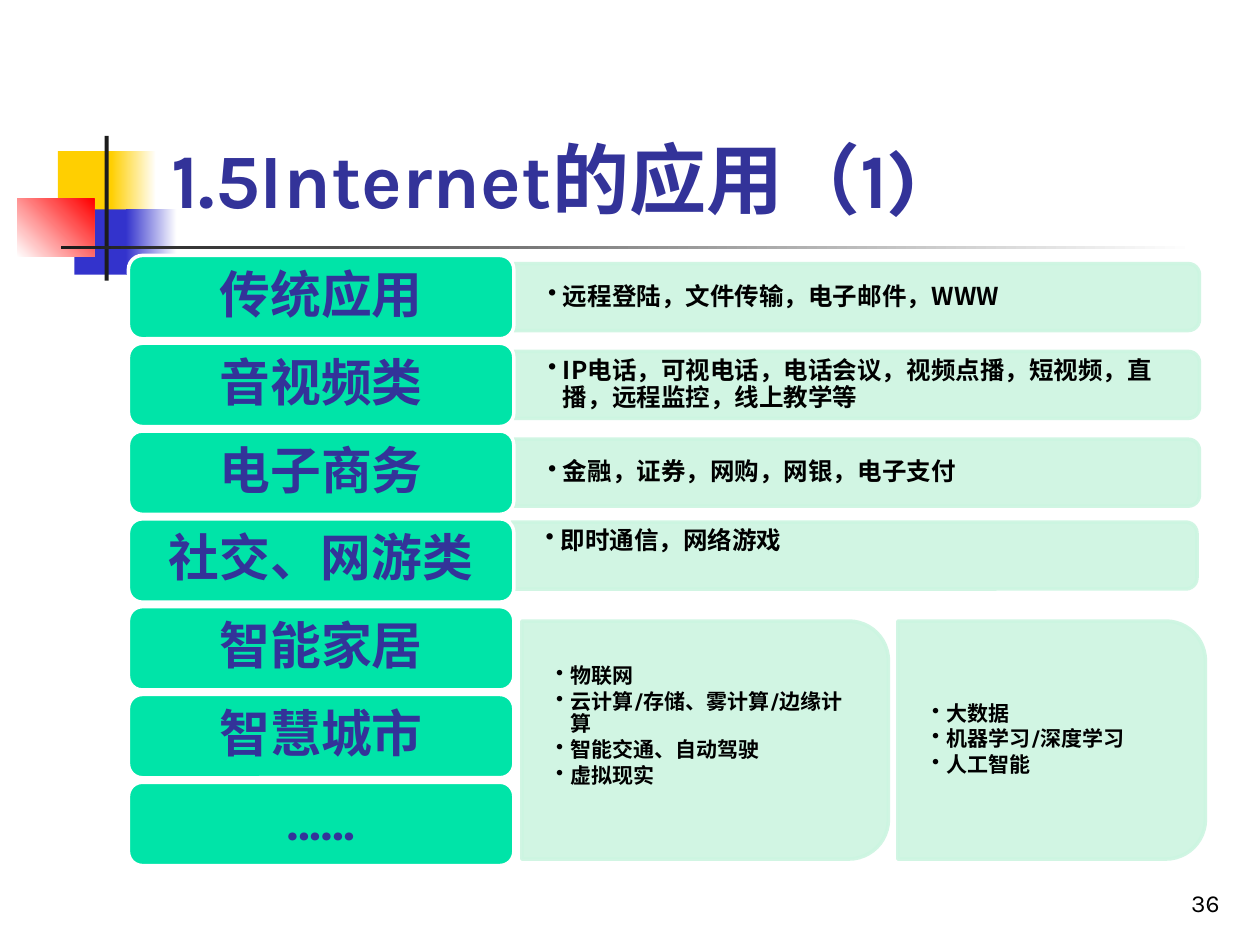
from dataclasses import dataclass

from lxml import etree
from pptx import Presentation
from pptx import util as u
from pptx.dml.color import RGBColor
from pptx.enum import shapes, text
from pptx.oxml import ns


@dataclass(frozen=True)
class Theme:
    latin: str = "Karla"
    cjk: str = "Noto Sans CJK SC"
    ink: str = "000000"
    heading: str = "333399"
    label: str = "00E4A8"
    panel: str = "CCF5E1"
    white: str = "FFFFFF"
    yellow: str = "FFCF01"
    blue: str = "3333CC"
    red: str = "FF0000"
    rule: str = "1C1C1C"
    title_size: int = 44
    label_size: int = 29
    row_size: int = 14
    list_size: int = 12
    number_size: int = 14
    outline: int = 2


THEME = Theme()

LABEL_LEFT, LABEL_TOP, LABEL_WIDTH, LABEL_HEIGHT = 2.59, 5.15, 7.77, 1.68
LABEL_PITCH = 1.77
ROW_LEFT, ROW_WIDTH, ROW_HEIGHT = 10.36, 13.82, 1.35
LIST_TOP, LIST_HEIGHT = 12.52, 4.8

LABELS = ["传统应用", "音视频类", "电子商务", "社交、网游类", "智能家居", "智慧城市", "……"]

# text, latin font, horizontal shift, vertical shift, lift of the text
ROWS = [
    ("远程登陆，文件传输，电子邮件，WWW", THEME.cjk, 0, 0, 0),
    ("IP电话，可视电话，电话会议，视频点播，短视频，直播，远程监控，线上教学等", THEME.cjk, 0, 0, 0),
    ("金融，证券，网购，网银，电子支付", THEME.latin, 0, 0, 0),
    ("即时通信，网络游戏", THEME.latin, -0.05, -0.1, 0.29),
]

# left, width, lift of the text, items
LISTS = [
    (10.52, 7.39, 0.27, ["物联网", "云计算/存储、雾计算/边缘计算", "智能交通、自动驾驶", "虚拟现实"]),
    (18.1, 6.2, 0, ["大数据", "机器学习/深度学习", "人工智能"]),
]

# left, top, width, height, gradient start (or flat colour), gradient end, angle
DECORATION = [
    (1.17, 3.05, 1.22, 1.32, THEME.yellow, None, 0),
    (2.24, 3.05, 0.91, 1.32, THEME.yellow, THEME.white, 0),
    (1.5, 4.22, 1.17, 1.32, THEME.blue, None, 0),
    (2.54, 4.22, 1.02, 1.32, THEME.blue, THEME.white, 0),
    (0.35, 4.01, 1.55, 1.17, THEME.white, THEME.red, 45),
    (2.11, 2.74, 0.08, 2.92, THEME.rule, None, 0),
    (1.23, 4.95, 22.86, 0.08, THEME.rule, THEME.white, 0),
]


def rgb(value):
    return RGBColor.from_string(value)


def apply(target, values):
    for name, value in values.items():
        setattr(target, name, value)


def add_block(slide, kind, box, fill, outline=None):
    shape = slide.shapes.add_shape(kind, *map(u.Cm, box))
    shape.shadow.inherit = False
    shape.fill.solid()
    shape.fill.fore_color.rgb = rgb(fill)
    if outline:
        shape.line.color.rgb = rgb(outline)
        shape.line.width = u.Pt(THEME.outline)
    else:
        shape.line.fill.background()
    return shape


def add_decoration(slide):
    for *box, start, end, angle in DECORATION:
        shape = add_block(slide, shapes.MSO_SHAPE.RECTANGLE, box, start)
        if end:
            shape.fill.gradient()
            shape.fill.gradient_angle = angle
            for stop, colour in zip(shape.fill.gradient_stops, (start, end)):
                stop.color.rgb = rgb(colour)


def write(shape, lines, size, colour, font=THEME.latin, bold=True, anchor=text.MSO_ANCHOR.MIDDLE,
          insets=(0.25, 0.13), paragraph_format=None, bullet=False):
    """Fill the shape's text frame, one paragraph a line; insets are horizontal, vertical."""
    across, down = map(u.Cm, insets)
    frame = shape.text_frame
    apply(frame, {"word_wrap": True, "vertical_anchor": anchor, "margin_left": across,
                  "margin_right": across, "margin_top": down, "margin_bottom": down})
    for index, line in enumerate(lines):
        paragraph = frame.add_paragraph() if index else frame.paragraphs[0]
        apply(paragraph, paragraph_format or {})
        run = paragraph.add_run()
        run.text = line
        apply(run.font, {"name": font, "size": u.Pt(size), "bold": bold})
        run.font.color.rgb = rgb(colour)
        east_asian = etree.SubElement(run.font._element, ns.qn("a:ea"))
        east_asian.set("typeface", THEME.cjk)
        if bullet:
            add_bullet(paragraph)


def add_bullet(paragraph):
    properties = paragraph._p.get_or_add_pPr()
    properties.set("marL", str(u.Cm(0.3)))
    properties.set("indent", str(-u.Cm(0.3)))
    etree.SubElement(properties, ns.qn("a:buChar")).set("char", "•")


def add_text(slide, box, lines, size, colour, **options):
    write(slide.shapes.add_textbox(*map(u.Cm, box)), lines, size, colour, **options)


def add_panel(slide, left, top, width, height, lines, size, font=THEME.latin, lift=0):
    """Bulleted text on a translucent block whose right corners are rounded."""
    # The preset rounds its top corners, so it is laid on its side about its centre.
    turned = (left + (width - height) / 2, top + (height - width) / 2, height, width)
    block = add_block(slide, shapes.MSO_SHAPE.ROUND_2_SAME_RECTANGLE, turned,
                      THEME.panel, THEME.panel)
    block.rotation = 90
    for colour in block._element.spPr.iter(ns.qn("a:srgbClr")):
        etree.SubElement(colour, ns.qn("a:alpha")).set("val", "90000")
    add_text(slide, (left, top - lift, width, height), lines, size, THEME.ink, font=font,
             insets=(0.69, 0.35), bullet=True,
             paragraph_format={"line_spacing": 0.9, "space_after": u.Pt(size * 0.15)})


def add_label(slide, top, name):
    label = add_block(slide, shapes.MSO_SHAPE.ROUNDED_RECTANGLE,
                      (LABEL_LEFT, top, LABEL_WIDTH, LABEL_HEIGHT), THEME.label, THEME.white)
    write(label, [name], THEME.label_size, THEME.heading,
          paragraph_format={"alignment": text.PP_ALIGN.CENTER, "line_spacing": 0.9})


def main():
    presentation = Presentation()
    apply(presentation, {"slide_width": u.Cm(25.4), "slide_height": u.Cm(19.05)})
    slide = presentation.slides.add_slide(presentation.slide_layouts[6])

    add_decoration(slide)
    add_text(slide, (3.2, 0.58, 21.64, 4.06), ["1.5Internet的应用（1)"],
             THEME.title_size, THEME.heading, anchor=text.MSO_ANCHOR.BOTTOM)

    tops = [LABEL_TOP + index * LABEL_PITCH for index in range(len(LABELS))]
    for top, (line, font, across, down, lift) in zip(tops, ROWS):
        row_top = top + (LABEL_HEIGHT - ROW_HEIGHT) / 2 + down
        add_panel(slide, ROW_LEFT + across, row_top, ROW_WIDTH, ROW_HEIGHT,
                  [line], THEME.row_size, font, lift)
    for top, name in zip(tops, LABELS):
        add_label(slide, top, name)
    for left, width, lift, items in LISTS:
        add_panel(slide, left, LIST_TOP, width, LIST_HEIGHT, items, THEME.list_size, lift=lift)

    add_text(slide, (19.56, 17.35, 5.28, 1.27), ["36"], THEME.number_size, THEME.ink, bold=False,
             anchor=text.MSO_ANCHOR.BOTTOM, paragraph_format={"alignment": text.PP_ALIGN.RIGHT})
    presentation.save("out.pptx")


if __name__ == "__main__":
    main()
